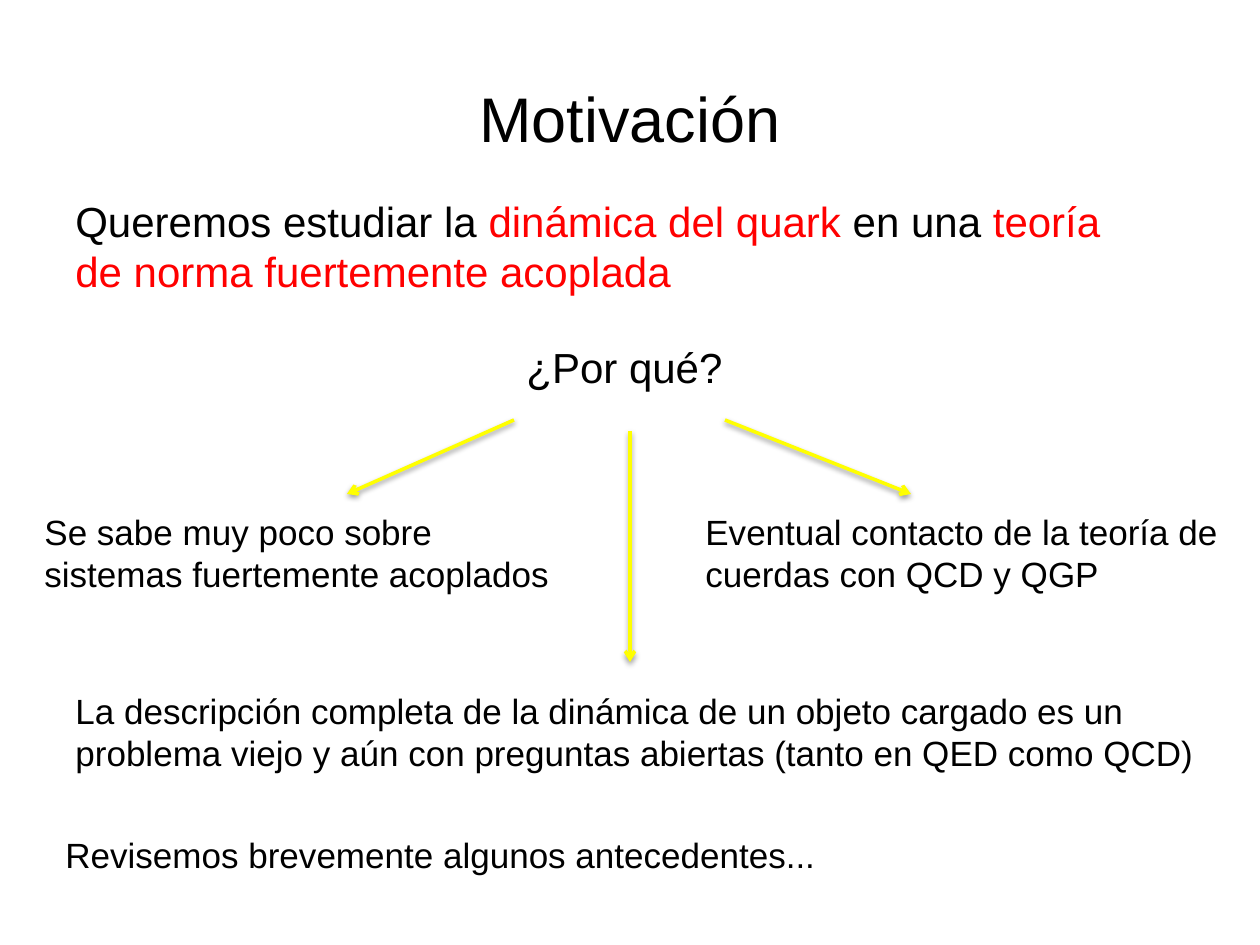
from dataclasses import dataclass

import pptx
import pptx.dml.color
import pptx.enum.shapes
import pptx.enum.text
import pptx.oxml
import pptx.oxml.ns
import pptx.util

PX_PER_INCH = 126
FONT = "Arial"
BLACK = pptx.dml.color.RGBColor(0x00, 0x00, 0x00)
RED = pptx.dml.color.RGBColor(0xFF, 0x00, 0x00)
YELLOW = pptx.dml.color.RGBColor(0xFF, 0xFF, 0x00)

TAIL_XML = f'<a:tailEnd {pptx.oxml.ns.nsdecls("a")} type="arrow"/>'
SHADOW_XML = (
    f'<a:effectLst {pptx.oxml.ns.nsdecls("a")}>'
    '<a:outerShdw blurRad="40000" dist="20000" dir="5400000" rotWithShape="0">'
    '<a:srgbClr val="000000"><a:alpha val="38000"/></a:srgbClr>'
    "</a:outerShdw></a:effectLst>"
)


@dataclass(frozen=True)
class Span:
    text: str
    color: pptx.dml.color.RGBColor = BLACK


@dataclass(frozen=True)
class TextBlock:
    box: tuple[int, int, int, int]
    size: int
    lines: list[list[Span]]


@dataclass(frozen=True)
class Reason:
    """An arrow from the question and the text it points at."""
    start: tuple[int, int]
    end: tuple[int, int]
    block: TextBlock


INTRO = TextBlock((63, 189, 1061, 115), 24, [
    [Span("Queremos estudiar la "), Span("dinámica del quark", RED),
     Span(" en una "), Span("teoría", RED)],
    [Span("de norma fuertemente acoplada", RED)],
])
QUESTION = TextBlock((514, 335, 223, 63), 24, [[Span("¿Por qué?")]])
REASONS = [
    Reason((514, 420), (347, 494), TextBlock((32, 504, 534, 97), 20, [
        [Span("Se sabe muy poco sobre")],
        [Span("sistemas fuertemente acoplados")],
    ])),
    Reason((725, 420), (911, 494), TextBlock((693, 504, 542, 97), 20, [
        [Span("Eventual contacto de la teoría de")],
        [Span("cuerdas con QCD y QGP")],
    ])),
    Reason((630, 431), (630, 662), TextBlock((63, 683, 1153, 97), 20, [
        [Span("La descripción completa de la dinámica de un objeto cargado es un")],
        [Span("problema viejo y aún con preguntas abiertas (tanto en QED como QCD)")],
    ])),
]
CLOSING = TextBlock((53, 827, 781, 55), 20, [
    [Span("Revisemos brevemente algunos antecedentes...")],
])


def px(value: int) -> pptx.util.Emu:
    return pptx.util.Emu(round(value * pptx.util.Inches(1) / PX_PER_INCH))


def style_run(r, size: int, color: pptx.dml.color.RGBColor) -> None:
    r.font.name = FONT
    r.font.size = pptx.util.Pt(size)
    r.font.color.rgb = color


def add_title(slide, text: str) -> None:
    sp = slide.shapes.title
    sp.left, sp.top, sp.width, sp.height = map(px, (63, 38, 1134, 158))
    tf = sp.text_frame
    tf.text = text
    tf.vertical_anchor = pptx.enum.text.MSO_ANCHOR.MIDDLE
    p = tf.paragraphs[0]
    p.alignment = pptx.enum.text.PP_ALIGN.CENTER
    style_run(p.runs[0], 36, BLACK)


def add_text(shapes, block: TextBlock) -> None:
    tf = shapes.add_textbox(*map(px, block.box)).text_frame
    tf.word_wrap = False
    tf.auto_size = pptx.enum.text.MSO_AUTO_SIZE.SHAPE_TO_FIT_TEXT
    for i, line in enumerate(block.lines):
        p = tf.add_paragraph() if i else tf.paragraphs[0]
        for span in line:
            r = p.add_run()
            r.text = span.text
            style_run(r, block.size, span.color)


def add_arrow(shapes, start: tuple[int, int], end: tuple[int, int]) -> None:
    arrow = shapes.add_connector(
        pptx.enum.shapes.MSO_CONNECTOR.STRAIGHT, *map(px, start + end))
    arrow.line.color.rgb = YELLOW
    arrow.line.width = pptx.util.Pt(2)
    arrow.line._get_or_add_ln().append(pptx.oxml.parse_xml(TAIL_XML))
    arrow._element.spPr.append(pptx.oxml.parse_xml(SHADOW_XML))


def add_reason(slide, reason: Reason) -> None:
    group = slide.shapes.add_group_shape()
    add_arrow(group.shapes, reason.start, reason.end)
    add_text(group.shapes, reason.block)


def main() -> None:
    prs = pptx.Presentation()
    prs.slide_width = pptx.util.Inches(10)
    prs.slide_height = pptx.util.Inches(7.5)
    slide = prs.slides.add_slide(prs.slide_layouts.get_by_name("Title Only"))
    add_title(slide, "Motivación")
    add_text(slide.shapes, INTRO)
    add_text(slide.shapes, QUESTION)
    for reason in REASONS:
        add_reason(slide, reason)
    add_text(slide.shapes, CLOSING)
    prs.save("out.pptx")


if __name__ == "__main__":
    main()
